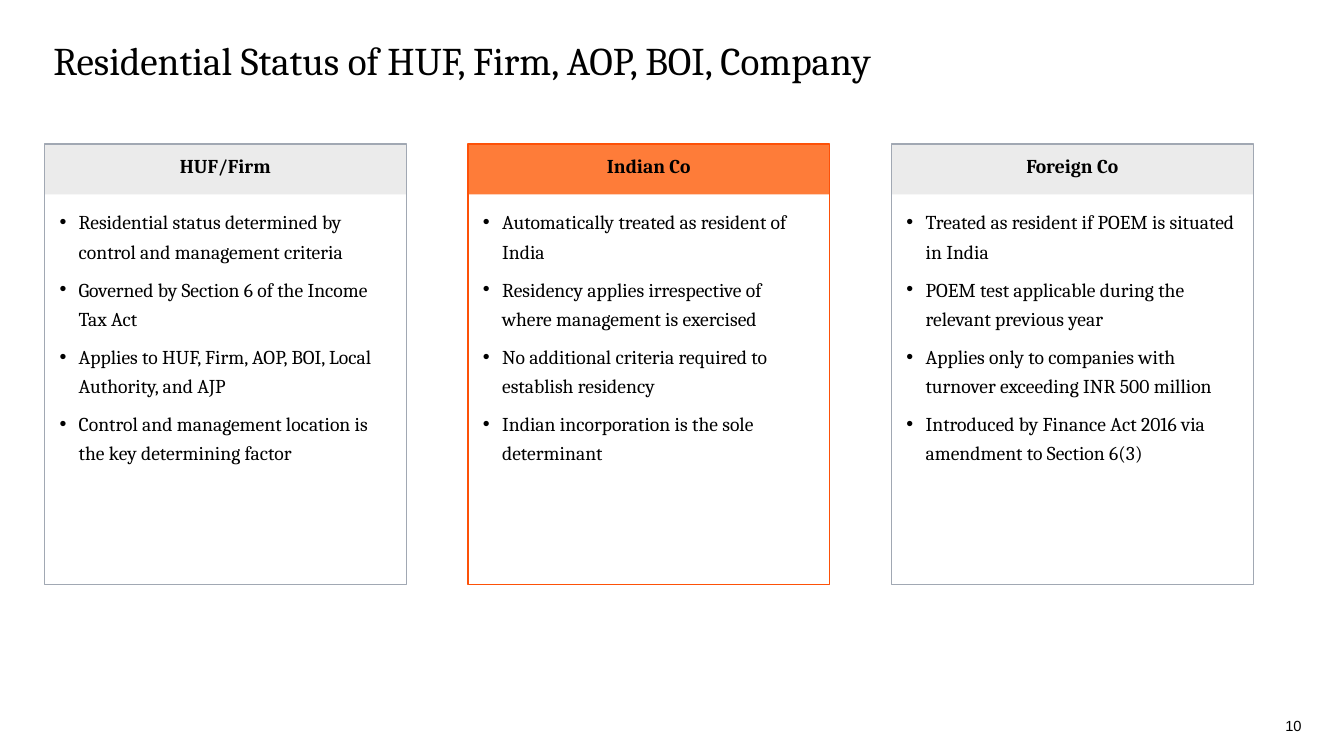
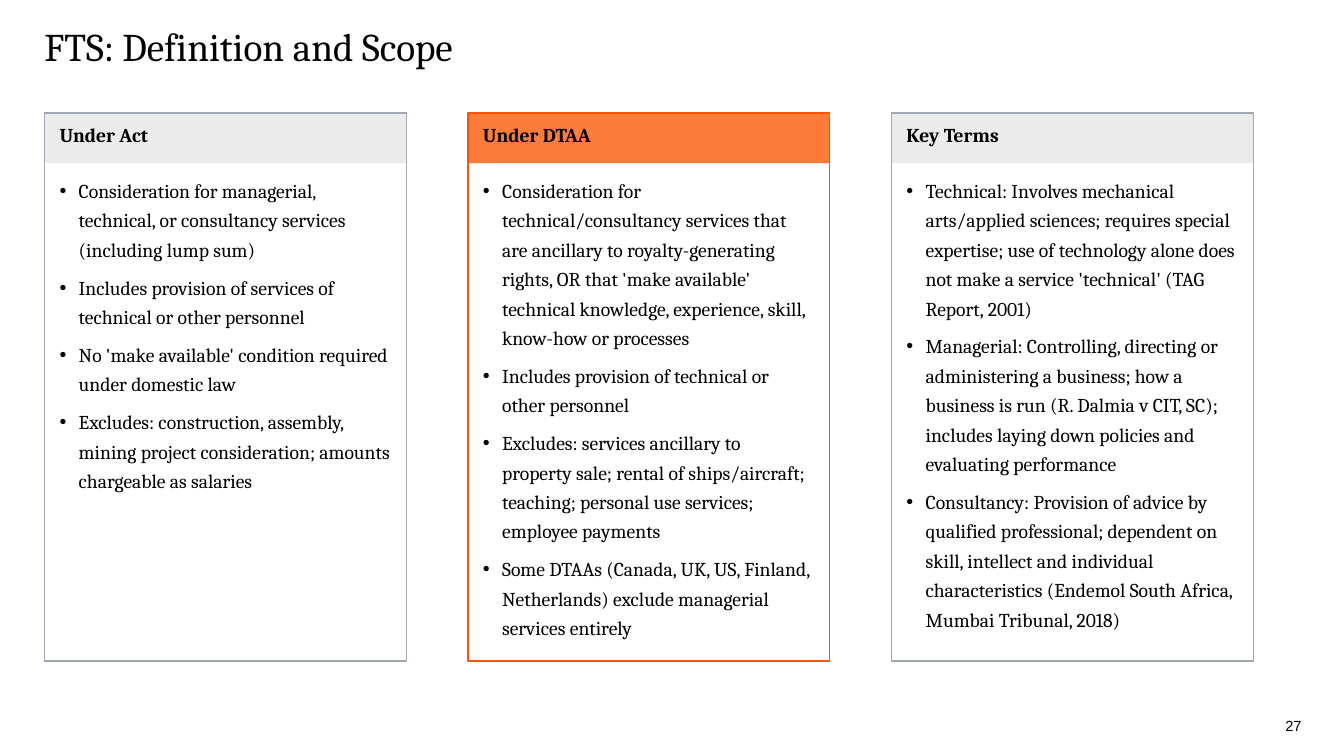
"""Build two slides that each set three rule cards side by side."""
from dataclasses import dataclass

from lxml.etree import SubElement
from pptx import Presentation
from pptx.dml.color import RGBColor
from pptx.enum.shapes import MSO_SHAPE
from pptx.enum.text import MSO_ANCHOR, PP_ALIGN
from pptx.oxml.ns import qn
from pptx.util import Inches, Pt


@dataclass(frozen=True)
class Theme:
    ink: str = "000000"
    grey: str = "EBEBEB"
    edge: str = "A1A8B3"
    flame: str = "FE7C39"
    rim: str = "FD5108"
    serif: str = "Cambria"
    sans: str = "Arial"
    title: float = 28
    body: float = 14
    small: float = 10.5


@dataclass(frozen=True)
class Grid:
    wide: float = 13.33
    high: float = 7.5
    left: float = 0.44
    step: float = 4.2
    card: float = 3.59
    band: float = 0.5

    def col(self, num):
        return self.left + num * self.step


THEME, GRID = Theme(), Grid()
FLUSH = (0, 0, 0, 0)
INSET = (0.15, 0.1, 0.15, 0.15)
HANG = 0.19

STATUS = [
    ("HUF/Firm", [
        "Residential status determined by control and management criteria",
        "Governed by Section 6 of the Income Tax Act",
        "Applies to HUF, Firm, AOP, BOI, Local Authority, and AJP",
        "Control and management location is the key determining factor"]),
    ("Indian Co", [
        "Automatically treated as resident of India",
        "Residency applies irrespective of where management is exercised",
        "No additional criteria required to establish residency",
        "Indian incorporation is the sole determinant"]),
    ("Foreign Co", [
        "Treated as resident if POEM is situated in India",
        "POEM test applicable during the relevant previous year",
        "Applies only to companies with turnover exceeding INR 500 million",
        "Introduced by Finance Act 2016 via amendment to Section 6(3)"]),
]

SCOPE = [
    ("Under Act", [
        "Consideration for managerial, technical, or consultancy services "
        "(including lump sum)",
        "Includes provision of services of technical or other personnel",
        "No 'make available' condition required under domestic law",
        "Excludes: construction, assembly, mining project consideration; "
        "amounts chargeable as salaries"]),
    ("Under DTAA", [
        "Consideration for technical/consultancy services that are ancillary "
        "to royalty-generating rights, OR that 'make available' technical "
        "knowledge, experience, skill, know-how or processes",
        "Includes provision of technical or other personnel",
        "Excludes: services ancillary to property sale; rental of "
        "ships/aircraft; teaching; personal use services; employee payments",
        "Some DTAAs (Canada, UK, US, Finland, Netherlands) exclude "
        "managerial services entirely"]),
    ("Key Terms", [
        "Technical: Involves mechanical arts/applied sciences; requires "
        "special expertise; use of technology alone does not make a service "
        "'technical' (TAG Report, 2001)",
        "Managerial: Controlling, directing or administering a business; how "
        "a business is run (R. Dalmia v CIT, SC); includes laying down "
        "policies and evaluating performance",
        "Consultancy: Provision of advice by qualified professional; "
        "dependent on skill, intellect and individual characteristics "
        "(Endemol South Africa, Mumbai Tribunal, 2018)"]),
]


def tint(code):
    """Turn a hex code into a colour."""
    return RGBColor.from_string(code)


def add_run(para, text, size, face=THEME.serif, bold=False):
    """Add one styled run to a paragraph."""
    run = para.add_run()
    run.text = text
    font = run.font
    font.size, font.name, font.bold = Pt(size), face, bold
    font.color.rgb = tint(THEME.ink)


def set_frame(shape, inset, anchor=MSO_ANCHOR.TOP):
    """Set wrap, insets and anchor, and return the text frame."""
    frame = shape.text_frame
    frame.word_wrap, frame.vertical_anchor = True, anchor
    (frame.margin_left, frame.margin_top,
     frame.margin_right, frame.margin_bottom) = map(Inches, inset)
    return frame


def add_rect(slide, area, fill=None, line=None):
    """Add a plain rectangle with an optional fill and outline."""
    rect = slide.shapes.add_shape(MSO_SHAPE.RECTANGLE, *map(Inches, area))
    rect.shadow.inherit = False
    if fill:
        rect.fill.solid()
        rect.fill.fore_color.rgb = tint(fill)
    else:
        rect.fill.background()
    if line:
        rect.line.color.rgb = tint(line)
        rect.line.width = Pt(1)
    else:
        rect.line.fill.background()
    return rect


def add_point(frame, text, gap):
    """Add one bulleted paragraph."""
    para = frame.add_paragraph()
    para.level, para.alignment = 1, PP_ALIGN.LEFT
    props = para._p.get_or_add_pPr()
    props.set("marL", str(Inches(HANG)))
    props.set("indent", str(-Inches(HANG)))
    hue = SubElement(props, qn("a:buClr"))
    SubElement(hue, qn("a:srgbClr"), val=THEME.ink)
    SubElement(props, qn("a:buFont"), typeface=THEME.sans)
    SubElement(props, qn("a:buChar"), char="•")
    para.line_spacing, para.space_before = 1.25, Pt(gap)
    add_run(para, text, THEME.body)


def add_card(slide, num, top, high, card, align):
    """Add a card with a header band and bullet points."""
    head, points = card
    fill, line = ((THEME.flame, THEME.rim) if num == 1
                  else (THEME.grey, THEME.edge))
    left = GRID.col(num)
    add_rect(slide, (left, top, GRID.card, GRID.band), fill=fill)
    box = add_rect(slide, (left, top, GRID.card, high), line=line)
    frame = set_frame(box, INSET)
    para = frame.paragraphs[0]
    para.alignment = align
    add_run(para, head, THEME.body, bold=True)
    for rank, text in enumerate(points):
        add_point(frame, text, 6 if rank else 19)


def add_title(slide, text, left, top, space):
    """Add the slide title."""
    area = left, top, GRID.wide - GRID.left - left, 0.47
    box = slide.shapes.add_textbox(*map(Inches, area))
    para = set_frame(box, FLUSH).paragraphs[0]
    para.line_spacing = space
    add_run(para, text, THEME.title)


def add_page(slide, num):
    """Add the page number at the bottom right."""
    area = GRID.wide - 0.75, GRID.high - 0.39, 0.33, 0.18
    box = slide.shapes.add_textbox(*map(Inches, area))
    para = set_frame(box, FLUSH, MSO_ANCHOR.BOTTOM).paragraphs[0]
    para.alignment = PP_ALIGN.RIGHT
    add_run(para, str(num), THEME.small, THEME.sans)


def add_slide(deck, title, cards, top, high, align, page):
    """Add a slide with a title, a row of cards and a page number."""
    slide = deck.slides.add_slide(deck.slide_layouts[6])
    for num, card in enumerate(cards):
        add_card(slide, num, top, high, card, align)
    add_title(slide, *title)
    add_page(slide, page)


def main():
    """Build and save the deck."""
    deck = Presentation()
    deck.slide_width, deck.slide_height = Inches(GRID.wide), Inches(GRID.high)
    add_slide(deck,
              ("Residential Status of HUF, Firm, AOP, BOI, Company",
               0.53, 0.36, 1.0),
              STATUS, 1.43, 4.37, PP_ALIGN.CENTER, 10)
    add_slide(deck, ("FTS: Definition and Scope", GRID.left, 0.27, 0.9),
              SCOPE, 1.12, 5.44, PP_ALIGN.LEFT, 27)
    deck.save("out.pptx")


if __name__ == "__main__":
    main()
